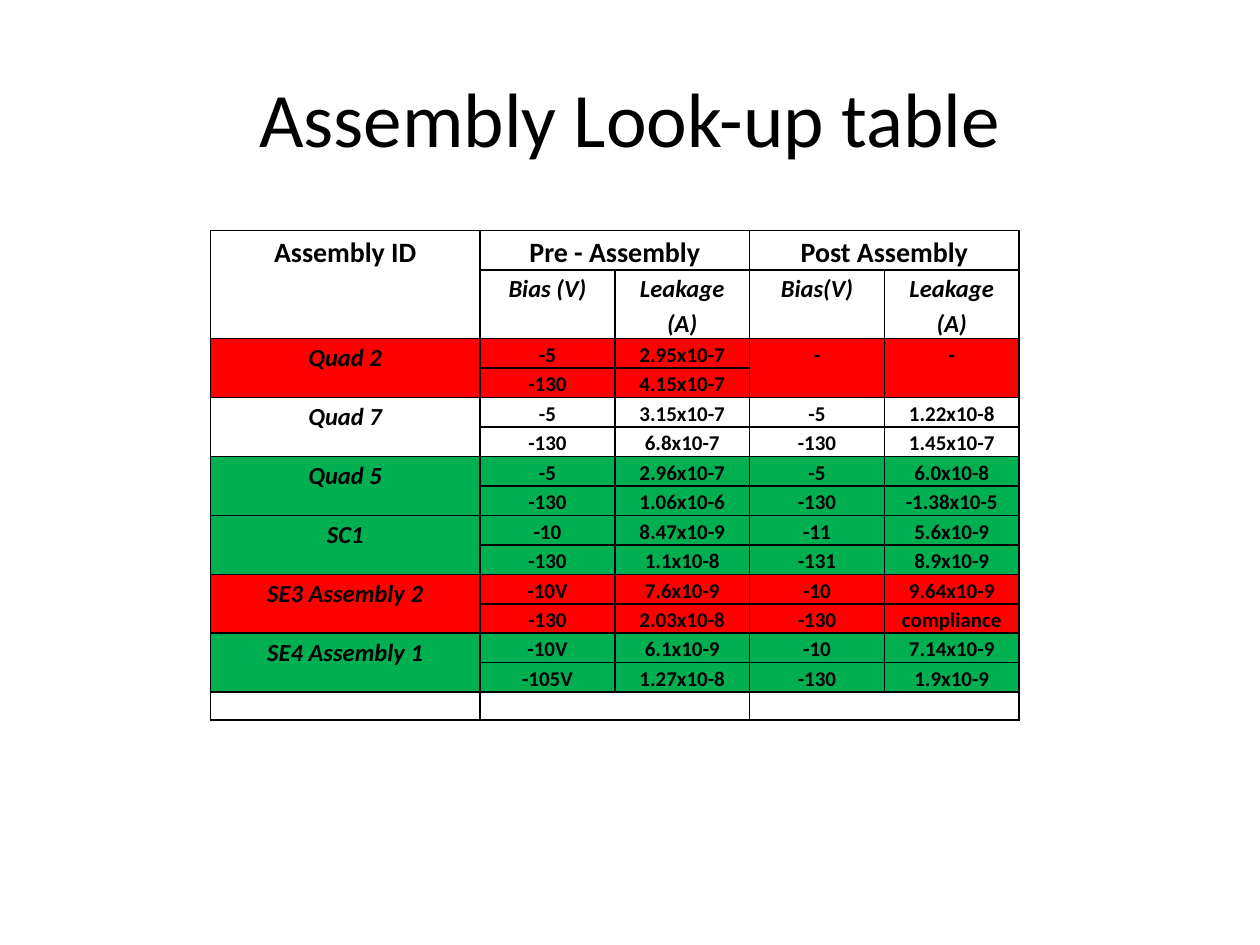
from lxml.etree import SubElement
from pptx import Presentation
from pptx.dml.color import RGBColor
from pptx.enum.text import MSO_ANCHOR, PP_ALIGN
from pptx.oxml.ns import qn
from pptx.util import Inches, Pt

FONT = "Calibri"
BLACK, RED, GREEN = "000000", "FF0000", "00B050"

TITLE = "Assembly Look-up table"
GROUPS = ["Assembly ID", "Pre - Assembly", "", "Post Assembly", ""]
MEASURES = ["", "Bias (V)", "Leakage (A)", "Bias(V)", "Leakage (A)"]
# Each assembly: name, fill, and two rows of pre bias, pre leakage, post bias, post leakage
ASSEMBLIES = [
    ("Quad 2", RED, ["-5", "2.95x10-7", "-", "-"], ["-130", "4.15x10-7", "", ""]),
    ("Quad 7", None, ["-5", "3.15x10-7", "-5", "1.22x10-8"], ["-130", "6.8x10-7", "-130", "1.45x10-7"]),
    ("Quad 5", GREEN, ["-5", "2.96x10-7", "-5", "6.0x10-8"], ["-130", "1.06x10-6", "-130", "-1.38x10-5"]),
    ("SC1", GREEN, ["-10", "8.47x10-9", "-11", "5.6x10-9"], ["-130", "1.1x10-8", "-131", "8.9x10-9"]),
    ("SE3 Assembly 2", RED, ["-10V", "7.6x10-9", "-10", "9.64x10-9"], ["-130", "2.03x10-8", "-130", "compliance"]),
    ("SE4 Assembly 1", GREEN, ["-10V", "6.1x10-9", "-10", "7.14x10-9"], ["-105V", "1.27x10-8", "-130", "1.9x10-9"]),
]

LEFT, TOP, UNIT = 1.67, 1.83, 1.07
COLUMN_UNITS = [2, 1, 1, 1, 1]
ROW_HEIGHTS = [0.31, 0.54] + [0.23] * (2 * len(ASSEMBLIES)) + [0.22]


def color(hex_string):
    return RGBColor.from_string(hex_string)


def style_text(paragraph, size, bold=False, italic=False):
    paragraph.alignment = PP_ALIGN.CENTER
    font = paragraph.font
    font.name, font.size, font.bold, font.italic = FONT, Pt(size), bold, italic
    font.color.rgb = color(BLACK)


def add_borders(cell):
    properties = cell._tc.get_or_add_tcPr()
    for index, side in enumerate(("a:lnL", "a:lnR", "a:lnT", "a:lnB")):
        line = properties.makeelement(qn(side), {"w": str(Pt(1))})
        solid = SubElement(line, qn("a:solidFill"))
        SubElement(solid, qn("a:srgbClr"), val=BLACK)
        properties.insert(index, line)


def fill_cell(cell, text, size, italic, fill):
    cell.margin_left = cell.margin_right = Inches(0.07)
    cell.margin_top = cell.margin_bottom = 0
    if fill:
        cell.fill.solid()
        cell.fill.fore_color.rgb = color(fill)
    else:
        cell.fill.background()
    add_borders(cell)
    paragraph = cell.text_frame.paragraphs[0]
    style_text(paragraph, size, bold=True, italic=italic)
    paragraph.line_spacing = 1.15
    if text:
        paragraph.add_run().text = text
    else:  # an empty cell takes its line height from the end mark
        SubElement(paragraph._p, qn("a:endParaRPr"), sz=str(size * 100))


def table_rows():
    """Give each row as a list of (text, size, italic, fill)."""
    rows = [[(text, 16, False, None) for text in GROUPS],
            [(text, 14, True, None) for text in MEASURES]]
    for name, fill, *readings in ASSEMBLIES:
        for label, values in zip((name, ""), readings):
            rows.append([(label, 14, True, fill)] + [(value, 12, False, fill) for value in values])
    rows.append([("", 10, False, None)] * len(COLUMN_UNITS))
    return rows


def merge_cells(table):
    last = len(ROW_HEIGHTS) - 1
    for row in (0, last):
        for column in (1, 3):
            table.cell(row, column).merge(table.cell(row, column + 1))
    for row in range(0, last, 2):
        table.cell(row, 0).merge(table.cell(row + 1, 0))
    for column in (3, 4):
        table.cell(2, column).merge(table.cell(3, column))


def add_lookup_table(page):
    frame = page.shapes.add_table(
        len(ROW_HEIGHTS), len(COLUMN_UNITS), Inches(LEFT), Inches(TOP),
        Inches(UNIT * sum(COLUMN_UNITS)), Inches(sum(ROW_HEIGHTS)))
    table = frame.table
    table.first_row = table.horz_banding = False
    for column, units in zip(table.columns, COLUMN_UNITS):
        column.width = Inches(UNIT * units)
    for row, height, contents in zip(table.rows, ROW_HEIGHTS, table_rows()):
        row.height = Inches(height)
        for cell, content in zip(row.cells, contents):
            fill_cell(cell, *content)
    merge_cells(table)


def main():
    deck = Presentation()
    deck.slide_width, deck.slide_height = Inches(10), Inches(7.5)
    page = deck.slides.add_slide(deck.slide_layouts[5])
    title = page.shapes.title
    title.left, title.top, title.width, title.height = map(Inches, (0.5, 0.3, 9, 1.25))
    title.text_frame.text = TITLE
    title.text_frame.vertical_anchor = MSO_ANCHOR.MIDDLE
    style_text(title.text_frame.paragraphs[0], 44)
    add_lookup_table(page)
    deck.save("out.pptx")


if __name__ == "__main__":
    main()
